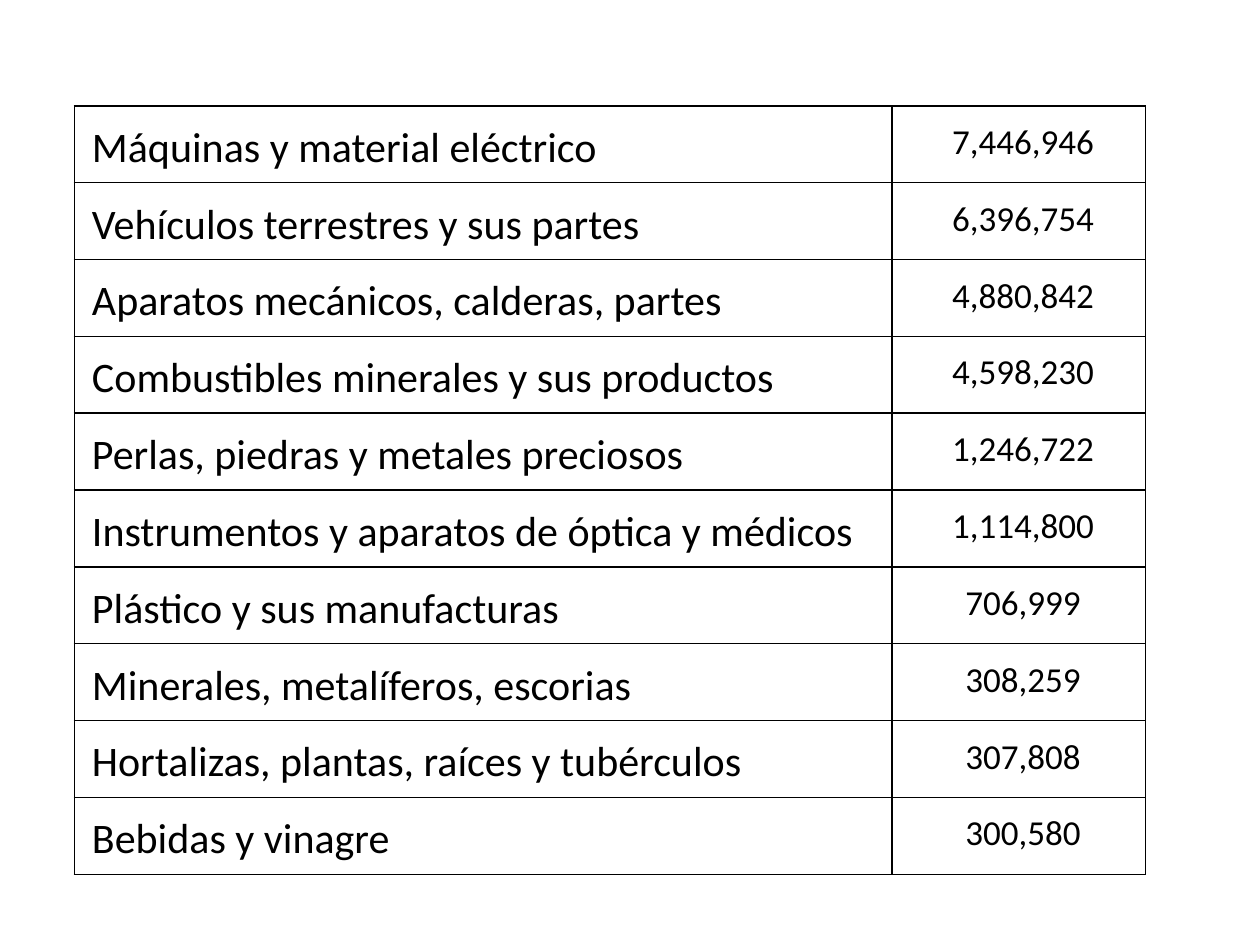
from lxml import etree
from pptx import Presentation
from pptx import util as u
from pptx.dml import color
from pptx.enum import text
from pptx.oxml import ns

ROWS = [
    ("Máquinas y material eléctrico", "7,446,946"),
    ("Vehículos terrestres y sus partes", "6,396,754"),
    ("Aparatos mecánicos, calderas, partes", "4,880,842"),
    ("Combustibles minerales y sus productos", "4,598,230"),
    ("Perlas, piedras y metales preciosos", "1,246,722"),
    ("Instrumentos y aparatos de óptica y médicos", "1,114,800"),
    ("Plástico y sus manufacturas", "706,999"),
    ("Minerales, metalíferos, escorias", "308,259"),
    ("Hortalizas, plantas, raíces y tubérculos", "307,808"),
    ("Bebidas y vinagre", "300,580"),
]


def rgb(value):
    return color.RGBColor.from_string(value)


class Deck:
    font = "Calibri"
    ink = "000000"
    inset = u.Inches(0.07)
    line_spacing = 1.15
    border = u.Pt(1)

    def __init__(self, slide):
        self.s = slide

    def table(self, left, top, widths, row_height, rows, styles):
        """Draw a table; styles holds a (size, alignment) pair per column."""
        frame = self.s.shapes.add_table(
            len(rows), len(widths), u.Inches(left), u.Inches(top),
            u.Inches(sum(widths)), u.Inches(row_height * len(rows)))
        tbl = frame.table
        tbl.first_row = tbl.horz_banding = False
        for column, width in zip(tbl.columns, widths):
            column.width = u.Inches(width)
        for row, values in zip(tbl.rows, rows):
            row.height = u.Inches(row_height)
            for cell, value, (size, align) in zip(row.cells, values, styles):
                self.cell(cell, value, size, align)

    def cell(self, cell, value, size, align):
        cell.margin_left = cell.margin_right = self.inset
        cell.margin_top = cell.margin_bottom = self.inset
        self.borders(cell)
        cell.fill.background()
        cell.text_frame.text = value
        p = cell.text_frame.paragraphs[0]
        p.alignment = align
        p.line_spacing = self.line_spacing
        p._p.get_or_add_pPr().set("marL", str(self.inset))
        r = p.runs[0]
        r.font.name = self.font
        r.font.size = u.Pt(size)
        r.font.color.rgb = rgb(self.ink)

    def borders(self, cell):
        tc_pr = cell._tc.get_or_add_tcPr()
        for side in ("a:lnL", "a:lnR", "a:lnT", "a:lnB"):
            ln = etree.SubElement(tc_pr, ns.qn(side), w=str(self.border))
            fill = etree.SubElement(ln, ns.qn("a:solidFill"))
            etree.SubElement(fill, ns.qn("a:srgbClr"), val=self.ink)


def main():
    prs = Presentation()
    prs.slide_width, prs.slide_height = u.Inches(10), u.Inches(7.5)
    deck = Deck(prs.slides.add_slide(prs.slide_layouts[6]))

    # Product groups and their values
    deck.table(0.59, 0.84, (6.49, 2.01), 0.61, ROWS,
               ((24, text.PP_ALIGN.LEFT), (20, text.PP_ALIGN.CENTER)))

    prs.save("out.pptx")


if __name__ == "__main__":
    main()
